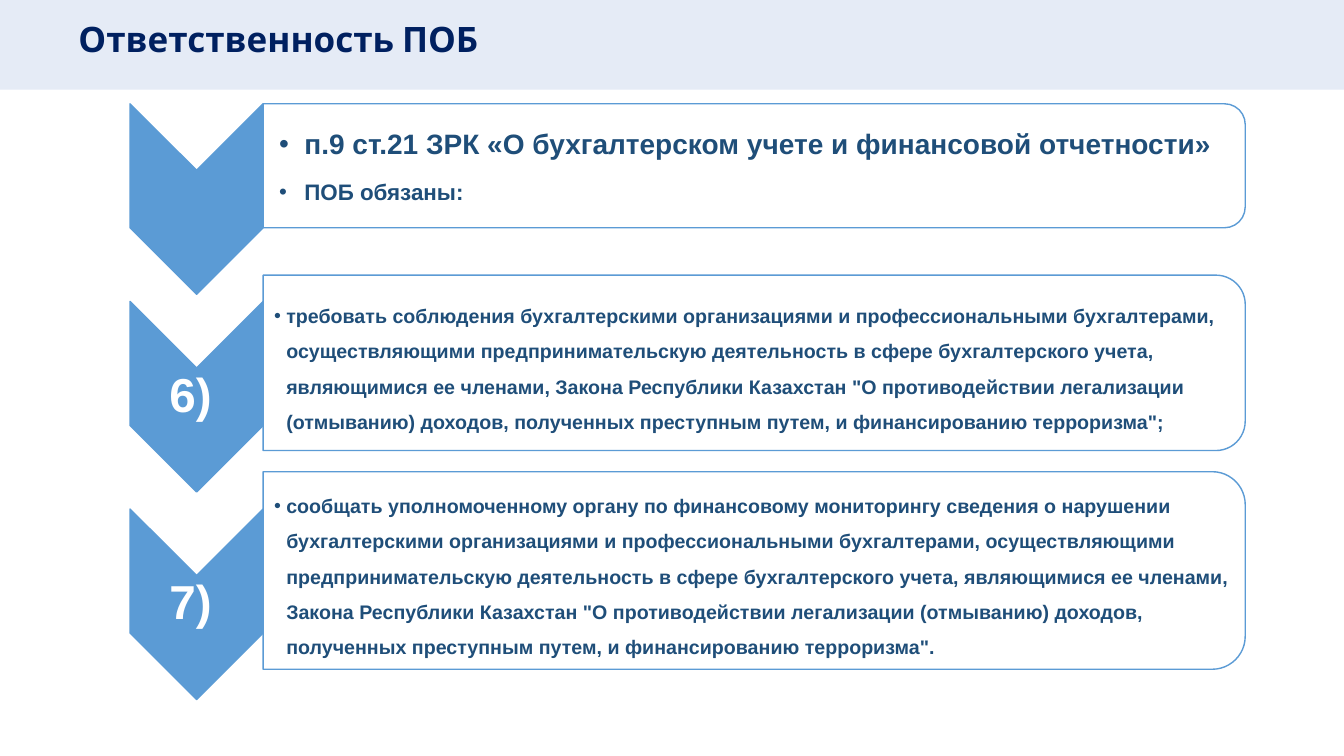
from lxml import etree
from pptx import Presentation
from pptx.dml.color import RGBColor
from pptx.enum.shapes import MSO_SHAPE
from pptx.enum.text import MSO_ANCHOR, PP_ALIGN
from pptx.oxml.ns import qn
from pptx.util import Inches, Pt

RECT = MSO_SHAPE.RECTANGLE
CHEVRON = MSO_SHAPE.CHEVRON
ROUND_TOP = MSO_SHAPE.ROUND_2_SAME_RECTANGLE
MIDDLE = MSO_ANCHOR.MIDDLE
CENTER = PP_ALIGN.CENTER

WHITE = RGBColor(0xFF, 0xFF, 0xFF)
BAND = RGBColor(0xDA, 0xE3, 0xF3)
NAVY = RGBColor(0x00, 0x20, 0x60)
BLUE = RGBColor(0x5B, 0x9B, 0xD5)
DARK_BLUE = RGBColor(0x1F, 0x4E, 0x79)

CHEVRON_LENGTH, CHEVRON_WIDTH = 1.89, 1.32
PANEL_WIDTH = 9.74

HEADING = [("п.9 ст.21 ЗРК «О бухгалтерском учете и финансовой отчетности»", 20, 1),
           ("ПОБ обязаны:", 16, 1.5)]
DUTY_6 = [('требовать соблюдения бухгалтерскими организациями и профессиональными '
           'бухгалтерами, осуществляющими предпринимательскую деятельность в сфере '
           'бухгалтерского учета, являющимися ее членами, Закона Республики Казахстан '
           '"О противодействии легализации (отмыванию) доходов, полученных преступным '
           'путем, и финансированию терроризма";', 14, 1.5)]
DUTY_7 = [('сообщать уполномоченному органу по финансовому мониторингу сведения о '
           'нарушении бухгалтерскими организациями и профессиональными бухгалтерами, '
           'осуществляющими предпринимательскую деятельность в сфере бухгалтерского '
           'учета, являющимися ее членами, Закона Республики Казахстан "О противодействии '
           'легализации (отмыванию) доходов, полученных преступным путем, и '
           'финансированию терроризма".', 14, 1.5)]

ROWS = [
    ("", 1.03, 1.23, 1.03, HEADING, 0.16, 0.25),
    ("6)", 2.73, 1.74, 2.99, DUTY_6, 0.11, 0.12),
    ("7)", 4.68, 1.96, 5.05, DUTY_7, 0.11, 0.12),
]


def add_filled(s, kind, x, y, w, h, color, opacity=100, line=None):
    sp = s.shapes.add_shape(kind, Inches(x), Inches(y), Inches(w), Inches(h))
    sp.shadow.inherit = False
    sp.fill.solid()
    sp.fill.fore_color.rgb = color
    if opacity < 100:
        clr = sp.fill._xPr.find(qn("a:solidFill"))[0]
        etree.SubElement(clr, qn("a:alpha")).set("val", str(opacity * 1000))
    if line is None:
        sp.line.fill.background()
    else:
        sp.line.color.rgb = line
        sp.line.width = Pt(1)
    return sp


def add_turned(s, kind, x, y, w, h, color, opacity=100):
    left, top = x + (w - h) / 2, y + (h - w) / 2
    sp = add_filled(s, kind, left, top, h, w, color, opacity, BLUE)
    sp.rotation = 90


def add_text_frame(s, x, y, w, h, insets):
    tf = s.shapes.add_textbox(Inches(x), Inches(y), Inches(w), Inches(h)).text_frame
    tf.word_wrap = True
    tf.margin_left, tf.margin_top, tf.margin_right, tf.margin_bottom = map(Inches, insets)
    return tf


def write(p, text, size, font, color):
    p.text = text
    f = p.runs[0].font
    f.size, f.name, f.bold = Pt(size), font, True
    f.color.rgb = color


def add_bullet(p, indent):
    pPr = p._p.get_or_add_pPr()
    pPr.set("marL", str(Inches(indent)))
    pPr.set("indent", str(-Inches(indent)))
    etree.SubElement(pPr, qn("a:buFont")).set("typeface", "Arial")
    etree.SubElement(pPr, qn("a:buChar")).set("char", "•")


def add_header(s, x, y, w, h):
    add_filled(s, RECT, x, y, w, h, BAND, 70)
    tf = add_text_frame(s, x + 0.68, y + 0.12, 8.91, 0.52, (0.1, 0.05, 0.1, 0.05))
    write(tf.paragraphs[0], "Ответственность ПОБ", 25, "Cabin", NAVY)


def add_marker(s, x, y, label):
    add_turned(s, CHEVRON, x, y, CHEVRON_WIDTH, CHEVRON_LENGTH, BLUE)
    if label:
        tf = add_text_frame(s, x - 0.06, y + 0.66, CHEVRON_WIDTH, 0.57, (0.02,) * 4)
        tf.vertical_anchor = MIDDLE
        p = tf.paragraphs[0]
        write(p, label, 34, "Arial", WHITE)
        p.alignment = CENTER
        p.line_spacing = 0.9
        p.space_after = Pt(12)


def add_panel(s, x, y, w, h, items, inset, indent):
    add_turned(s, ROUND_TOP, x, y, w, h, WHITE, 90)
    tf = add_text_frame(s, x, y + 0.08, w - 0.08, h - 0.16, (inset, 0.01, 0.01, 0.01))
    tf.vertical_anchor = MIDDLE
    for i, (text, size, spacing) in enumerate(items):
        p = tf.paragraphs[0] if i == 0 else tf.add_paragraph()
        write(p, text, size, "Arial", DARK_BLUE)
        p.line_spacing = spacing
        p.space_after = Pt(size * 0.15)
        add_bullet(p, indent)


def add_row(s, x, label, top, height, marker_top, items, inset, indent):
    add_marker(s, x, marker_top, label)
    add_panel(s, x + CHEVRON_WIDTH, top, PANEL_WIDTH, height, items, inset, indent)


def main():
    prs = Presentation()
    prs.slide_width, prs.slide_height = Inches(13.33), Inches(7.5)
    s = prs.slides.add_slide(prs.slide_layouts[6])
    add_header(s, 0, 0, 13.33, 0.89)
    for row in ROWS:
        add_row(s, 1.29, *row)
    prs.save("out.pptx")


if __name__ == "__main__":
    main()
